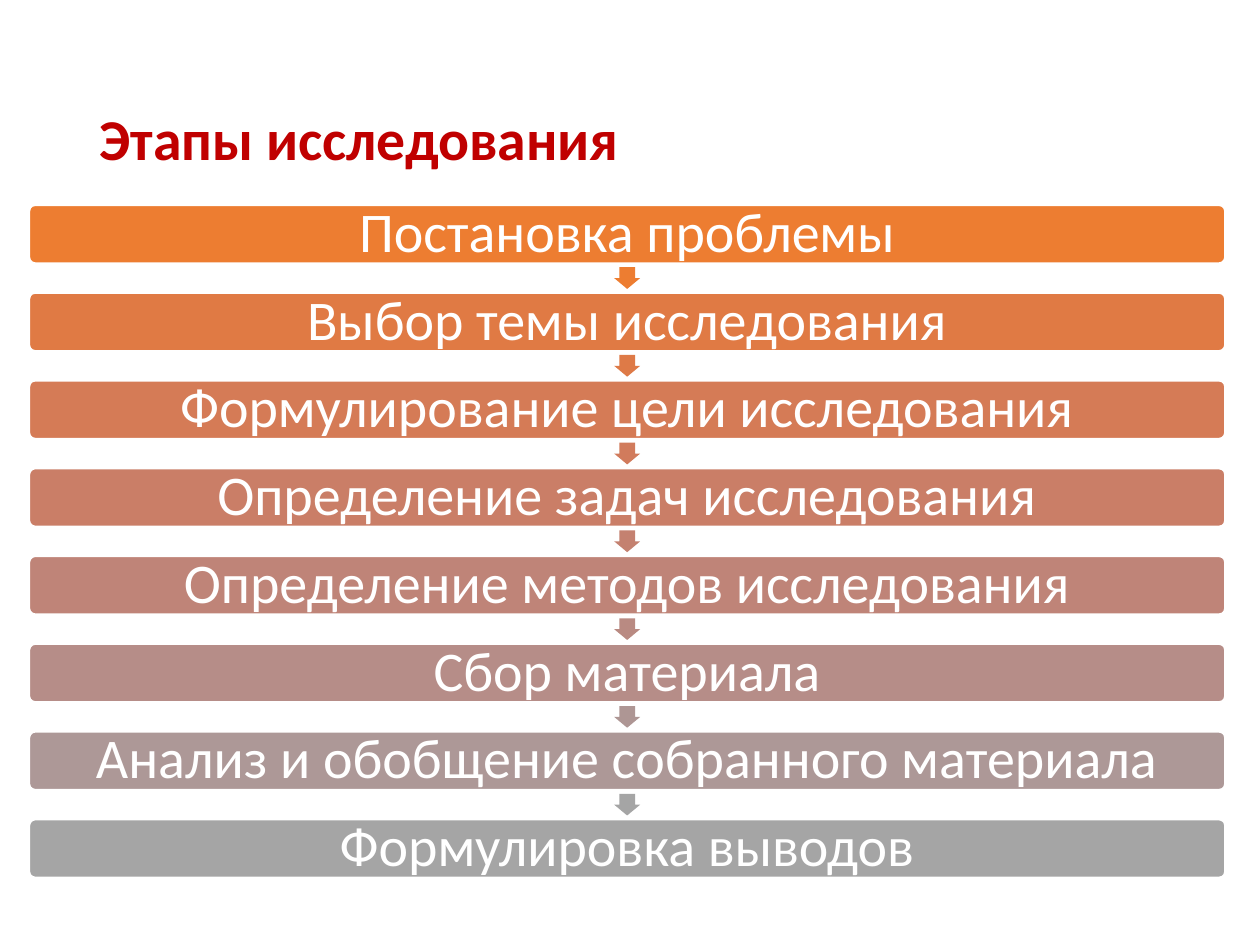
from pptx import Presentation
from pptx.dml.color import RGBColor
from pptx.enum.shapes import MSO_SHAPE
from pptx.enum.text import MSO_ANCHOR, MSO_AUTO_SIZE, PP_ALIGN
from pptx.util import Pt

COLORS = {"title": "C00000", "white": "FFFFFF"}

# Stage text, bar colour, colour of the arrow below it
STAGES = [
    ("Постановка проблемы", "ED7D31", "ED7D31"),
    ("Выбор темы исследования", "E07A44", "DE7A47"),
    ("Формулирование цели исследования", "D57B56", "D17B5C"),
    ("Определение задач исследования", "CA7E67", "C48170"),
    ("Определение методов исследования", "BF8478", "B98A82"),
    ("Сбор материала", "B68D88", "AE9694"),
    ("Анализ и обобщение собранного материала", "AD9897", "A5A5A5"),
    ("Формулировка выводов", "A5A5A5", None),
]

# Layout of the flow, in points
BAR_LEFT, BAR_TOP, BAR_WIDTH, BAR_HEIGHT = 16.8, 117.3, 683.2, 33.1
STEP = 50.15
ARROW_LENGTH, ARROW_SPAN = 12.4, 14.9
ARROW_CENTER = 41.6  # below the top of its bar

FRAME_FORMAT = {
    "word_wrap": True,
    "auto_size": MSO_AUTO_SIZE.NONE,
    "vertical_anchor": MSO_ANCHOR.MIDDLE,
}


def set_attributes(target, values):
    for name, value in values.items():
        setattr(target, name, value)


def write_text(shape, text, alignment, color, font_format):
    frame = shape.text_frame
    set_attributes(frame, FRAME_FORMAT)
    paragraph = frame.paragraphs[0]
    set_attributes(paragraph, {"alignment": alignment, "line_spacing": 0.9})
    run = paragraph.add_run()
    run.text = text
    set_attributes(run.font, {"name": "Calibri", **font_format})
    run.font.color.rgb = RGBColor.from_string(color)


def add_filled_shape(slide, kind, box, fill, adjustments):
    shape = slide.shapes.add_shape(kind, *map(Pt, box))
    shape.shadow.inherit = False
    shape.fill.solid()
    shape.fill.fore_color.rgb = RGBColor.from_string(fill)
    for index, value in enumerate(adjustments):
        shape.adjustments[index] = value
    return shape


def format_title(slide):
    title = slide.shapes.title
    box = {"left": 49.7, "top": 28.8, "width": 620.6, "height": 104.4}
    set_attributes(title, {name: Pt(value) for name, value in box.items()})
    write_text(title, "Этапы исследования", PP_ALIGN.LEFT, COLORS["title"],
               {"size": Pt(33), "bold": True})


def add_bar(slide, top, text, fill):
    bar = add_filled_shape(slide, MSO_SHAPE.ROUNDED_RECTANGLE,
                           (BAR_LEFT, top, BAR_WIDTH, BAR_HEIGHT), fill, [0.1])
    bar.line.color.rgb = RGBColor.from_string(COLORS["white"])
    bar.line.width = Pt(1)
    sides = ("left", "top", "right", "bottom")
    set_attributes(bar.text_frame, {f"margin_{side}": Pt(9.6) for side in sides})
    write_text(bar, text, PP_ALIGN.CENTER, COLORS["white"], {"size": Pt(32)})


def add_arrow(slide, center_y, fill):
    left = BAR_LEFT + (BAR_WIDTH - ARROW_LENGTH) / 2
    box = (left, center_y - ARROW_SPAN / 2, ARROW_LENGTH, ARROW_SPAN)
    arrow = add_filled_shape(slide, MSO_SHAPE.RIGHT_ARROW, box, fill, [0.6, 0.5])
    arrow.rotation = 90
    arrow.line.fill.background()


def main():
    presentation = Presentation()
    presentation.slide_width, presentation.slide_height = Pt(720), Pt(540)
    slide = presentation.slides.add_slide(presentation.slide_layouts[5])

    # Heading
    format_title(slide)

    # Stages from top to bottom, with an arrow to the next one
    for index, (text, bar_color, arrow_color) in enumerate(STAGES):
        top = BAR_TOP + index * STEP
        add_bar(slide, top, text, bar_color)
        if arrow_color:
            add_arrow(slide, top + ARROW_CENTER, arrow_color)

    presentation.save("out.pptx")


if __name__ == "__main__":
    main()
